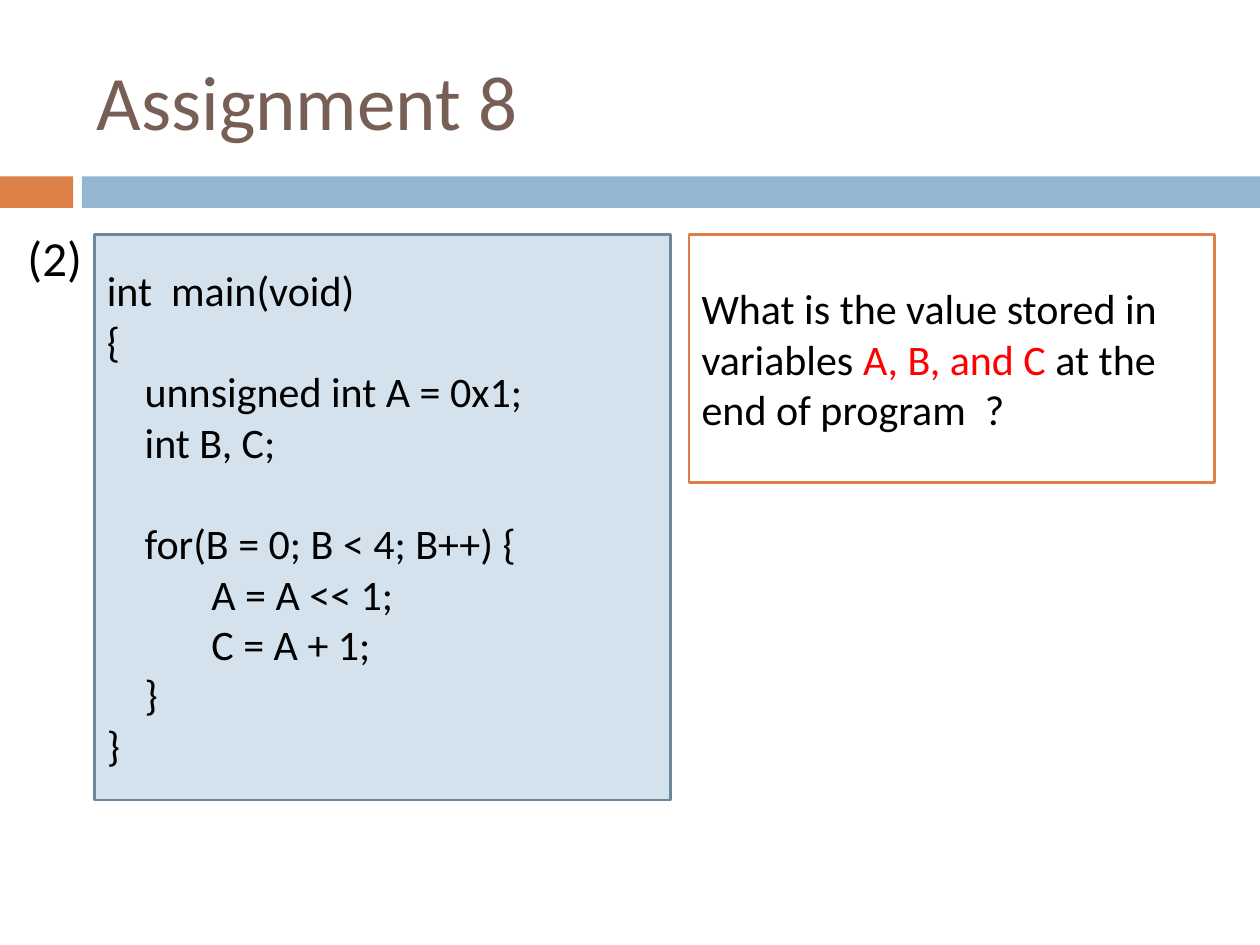
from pptx import Presentation
from pptx.dml.color import RGBColor
from pptx.enum.shapes import MSO_SHAPE
from pptx.enum.text import MSO_ANCHOR, PP_ALIGN
from pptx.util import Inches, Pt

RECTANGLE = MSO_SHAPE.RECTANGLE
TOP, MIDDLE = MSO_ANCHOR.TOP, MSO_ANCHOR.MIDDLE
LEFT = PP_ALIGN.LEFT

ORANGE = RGBColor(0xDD, 0x80, 0x47)
BLUE = RGBColor(0x94, 0xB6, 0xD2)
PALE_BLUE = RGBColor(0xD4, 0xE2, 0xED)
SLATE = RGBColor(0x6D, 0x87, 0x9B)
BROWN = RGBColor(0x77, 0x5F, 0x55)
BLACK = RGBColor(0, 0, 0)
RED = RGBColor(0xFF, 0, 0)
WHITE = RGBColor(0xFF, 0xFF, 0xFF)

FONT = "Calibri"
BODY_SIZE = 24
CODE_LINE_HEIGHT = Pt(29.3)
CODE_INDENTS = (0, 0.3, 0.83)
BAR_TOP, BAR_HEIGHT = 1.4, 0.25
PANEL_TOP = 1.86

CODE = [
    (0, "int  main(void)"),
    (0, "{"),
    (1, "unnsigned int A = 0x1;"),
    (1, "int B, C;"),
    (1, "for(B = 0; B < 4; B++) {"),
    (2, "A = A << 1;"),
    (2, "C = A + 1;"),
    (1, "}"),
    (0, "}"),
]
LOOP_LINE = 4
QUESTION = [
    ("What is the value stored in variables ", BLACK),
    ("A, B, and C", RED),
    (" at the end of program  ?", BLACK),
]


def add_span(para, text, size=BODY_SIZE, color=BLACK):
    span = para.add_run()
    span.text = text
    for name, value in {"name": FONT, "size": Pt(size)}.items():
        setattr(span.font, name, value)
    span.font.color.rgb = color


def add_rectangle(page, left, top, width, height, fill, outline=None):
    box = page.shapes.add_shape(
        RECTANGLE, Inches(left), Inches(top), Inches(width), Inches(height))
    box.shadow.inherit = False
    box.fill.solid()
    box.fill.fore_color.rgb = fill
    if outline is None:
        box.line.fill.background()
    else:
        box.line.color.rgb = outline
        box.line.width = Pt(1.5)
    return box


def format_frame(box, anchor=MIDDLE, wrap=True):
    frame = box.text_frame
    for name, value in {"word_wrap": wrap, "vertical_anchor": anchor}.items():
        setattr(frame, name, value)
    frame.paragraphs[0].alignment = LEFT
    return frame


def add_label(page, left, top, width, height, text, size, color, anchor, wrap):
    box = page.shapes.add_textbox(
        Inches(left), Inches(top), Inches(width), Inches(height))
    frame = format_frame(box, anchor, wrap)
    add_span(frame.paragraphs[0], text, size, color)


def add_code(box):
    frame = format_frame(box)
    for index, (level, text) in enumerate(CODE):
        para = frame.add_paragraph() if index else frame.paragraphs[0]
        para.alignment = LEFT
        indent = Inches(CODE_INDENTS[level])
        para._p.get_or_add_pPr().set("marL", str(indent))
        if index == LOOP_LINE:
            para.space_before = CODE_LINE_HEIGHT
        add_span(para, text)


def add_question(box):
    para = format_frame(box).paragraphs[0]
    for text, color in QUESTION:
        add_span(para, text, color=color)


def main():
    deck = Presentation()
    deck.slide_width, deck.slide_height = Inches(10), Inches(7.5)
    page = deck.slides.add_slide(deck.slide_layouts[6])

    add_rectangle(page, 0, BAR_TOP, 0.58, BAR_HEIGHT, ORANGE)
    add_rectangle(page, 0.65, BAR_TOP, 9.35, BAR_HEIGHT, BLUE)
    add_label(page, 0.67, 0.25, 8.92, 1.08, "Assignment 8", 44, BROWN, MIDDLE, True)
    add_code(add_rectangle(page, 0.75, PANEL_TOP, 4.57, 4.49, PALE_BLUE, SLATE))
    add_question(add_rectangle(page, 5.47, PANEL_TOP, 4.17, 1.97, WHITE, ORANGE))
    add_label(page, 0.12, 1.76, 0.63, 0.57, "(2)", 28, BLACK, TOP, False)

    deck.save("out.pptx")


if __name__ == "__main__":
    main()
